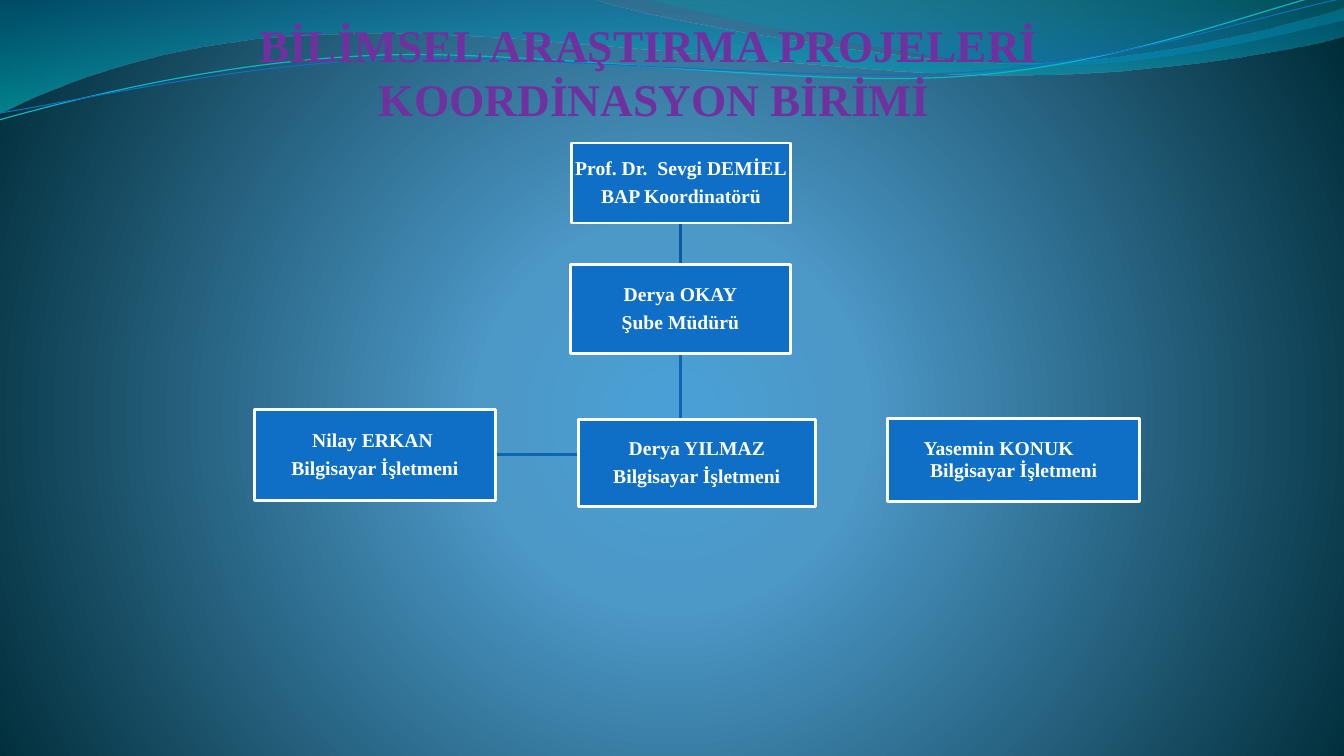
"""Build the organisation chart slide of the research projects unit."""
from pptx import Presentation
from pptx.dml.color import RGBColor
from pptx.enum.shapes import MSO_SHAPE
from pptx.enum.text import MSO_ANCHOR, PP_ALIGN
from pptx.oxml import parse_xml
from pptx.oxml.ns import nsdecls, qn
from pptx.util import Pt

RECTANGLE = MSO_SHAPE.RECTANGLE
MIDDLE, TOP = MSO_ANCHOR.MIDDLE, MSO_ANCHOR.TOP
CENTER = PP_ALIGN.CENTER

FONT = "Times New Roman"
COLORS = {
    "box": "0F6FC6", "white": "FFFFFF", "title": "7030A0",
    "upper link": "0C599F", "lower link": "0E65B4",
    "teal line": "0AB8BF", "blue line": "0F6FC6",
    "centre": "4AA0D6", "middle": "4C98C7", "edge": "002C38",
    "deep blue": "0074A1", "turquoise": "00C6CF",
    "sea green": "00A1A9", "sky": "008BBF",
}
TITLE = ["BİLİMSEL ARAŞTIRMA PROJELERİ", " KOORDİNASYON BİRİMİ"]
STAFF = [
    ((408.2, 102.2, 156.6, 57.2), ["Prof. Dr.  Sevgi DEMİEL", "BAP Koordinatörü"]),
    ((407.5, 188.9, 157, 63.4), ["Derya OKAY", "Şube Müdürü"]),
    ((181.6, 292.5, 172.6, 64.8), ["Nilay ERKAN ", "Bilgisayar İşletmeni"]),
    ((413.3, 299.5, 169, 62.6), ["Derya YILMAZ", "Bilgisayar İşletmeni"]),
    ((634.1, 298.8, 180, 59.6), ["Yasemin KONUK Bilgisayar İşletmeni"]),
]
INSET = 0.7
HANGING = 21.4

BACKGROUND = [(0, "centre", 100), (25, "middle", 100), (100, "edge", 100)]
CIRCLE = '<a:path path="circle"><a:fillToRect l="10000" t="110000" r="10000" b="100000"/></a:path>'
DOWNWARD = '<a:lin ang="5400000" scaled="1"/>'
WAVES = [
    ([(0, "deep blue", 45), (100, "turquoise", 55)], (0, 0), [
        [(422.6, -0.7)],
        [(456.5, 12.2), (637.2, 45.4), (727.9, 45.4)],
        [(819.4, 45.4), (920.2, 18.7), (959.8, 6.5)],
        [(961.2, 25.9)],
        [(943.9, 31.7), (835.2, 54.7), (715.7, 54)],
        [(596.9, 54), (366.5, 20.2), (247, 24.5)],
        [(123.8, 25.9), (43.9, 59.8), (-0.7, 81.4)],
        [(0, 0)]]),
    ([(0, "sea green", 30), (80, "sky", 45)], (460.1, -0.7), [
        [(488.9, 7.9), (654.5, 44.6), (738, 46.8)],
        [(821.5, 49.7), (923, 23), (959.8, 15.1)],
        [(959.8, 0)],
        [(460.1, -0.7)]]),
]
WAVE_LINES = [
    ("teal line", 0.85, (-0.7, 85.7), [
        [(46.1, 72.7), (151.9, 44.6), (265.7, 39.6)],
        [(379.4, 34.6), (568.8, 62.6), (684, 54.7)],
        [(799.2, 47.5), (901.4, 5.8), (958.3, -7.2)]]),
    ("blue line", 0.75, (0, 80.6), [
        [(45.4, 74.2), (157, 47.5), (272.2, 42.5)],
        [(386.6, 38.2), (573.1, 59), (687.6, 51.8)],
        [(802.8, 44.6), (903.6, 10.1), (960.5, -1.4)]]),
]
LINKS = [
    ("lower link", 2, (486, 252.7), [[(486, 324.7)], [(354.2, 324.7)]]),
    ("upper link", 2, (486, 159.1), [[(486, 169.9)], [(486, 169.9)], [(486, 188.6)]]),
]
LEAST_WIDTH = 7.2


def color(name):
    return RGBColor.from_string(COLORS[name])


def gradient(stops, direction):
    marks = "".join(
        f'<a:gs pos="{position * 1000}"><a:srgbClr val="{COLORS[name]}">'
        f'<a:alpha val="{opacity * 1000}"/></a:srgbClr></a:gs>'
        for position, name, opacity in stops)
    return parse_xml(f'<a:gradFill {nsdecls("a")} rotWithShape="1">'
                     f'<a:gsLst>{marks}</a:gsLst>{direction}</a:gradFill>')


def add_outline(slide, start, segments, closed):
    ends = [start] + [segment[-1] for segment in segments]
    left, right = min(x for x, y in ends), max(x for x, y in ends)
    top, bottom = min(y for x, y in ends), max(y for x, y in ends)
    if left == right:
        left, right = left - LEAST_WIDTH / 2, right + LEAST_WIDTH / 2
    builder = slide.shapes.build_freeform(Pt(left), Pt(top))
    builder.add_line_segments([(Pt(right), Pt(bottom))], close=False)
    shape = builder.convert_to_shape()
    shape.shadow.inherit = False
    shape.fill.background()

    def step(tag, points):
        marks = "".join(f'<a:pt x="{Pt(x - left)}" y="{Pt(y - top)}"/>' for x, y in points)
        return f"<a:{tag}>{marks}</a:{tag}>"

    steps = step("moveTo", [start]) + "".join(
        step("lnTo" if len(segment) == 1 else "cubicBezTo", segment) for segment in segments)
    ending = "<a:close/>" if closed else ""
    outline = parse_xml(f'<a:pathLst {nsdecls("a")}><a:path w="{shape.width}" h="{shape.height}">'
                        f'{steps}{ending}</a:path></a:pathLst>')
    geometry = shape.element.spPr.find(qn("a:custGeom"))
    geometry.replace(geometry.find(qn("a:pathLst")), outline)
    return shape


def style_line(line, name, width):
    line.color.rgb = color(name)
    line.width = Pt(width)


def add_wave(slide, stops, start, segments):
    shape = add_outline(slide, start, segments, True)
    shape.line.fill.background()
    properties = shape.element.spPr
    properties.replace(properties.find(qn("a:noFill")), gradient(stops, DOWNWARD))


def add_text(paragraph, text, size, name):
    run = paragraph.add_run()
    run.text = text
    run.font.name = FONT
    run.font.size = Pt(size)
    run.font.bold = True
    run.font.color.rgb = color(name)


def prepare_frame(shape, inset, anchor):
    frame = shape.text_frame
    frame.word_wrap = True
    frame.vertical_anchor = anchor
    frame.margin_left = frame.margin_right = Pt(inset)
    frame.margin_top = frame.margin_bottom = Pt(inset)
    return frame


def add_title(slide):
    title = slide.shapes.add_textbox(Pt(55.4), Pt(12.7), Pt(815.8), Pt(77.2))
    paragraph = prepare_frame(title, 0, TOP).paragraphs[0]
    paragraph.alignment = CENTER
    paragraph.line_spacing = Pt(38.6)
    add_text(paragraph, TITLE[0], 32.4, "title")
    paragraph.add_line_break()
    add_text(paragraph, TITLE[1], 32.4, "title")


def add_staff_box(slide, place, lines):
    shape = slide.shapes.add_shape(RECTANGLE, *map(Pt, place))
    shape.shadow.inherit = False
    shape.fill.solid()
    shape.fill.fore_color.rgb = color("box")
    style_line(shape.line, "white", 2)
    frame = prepare_frame(shape, INSET, MIDDLE)
    for index, text in enumerate(lines):
        paragraph = frame.add_paragraph() if index else frame.paragraphs[0]
        paragraph.alignment = CENTER
        paragraph.line_spacing = 0.9
        paragraph.space_after = Pt(4.9)
        add_text(paragraph, text, 14, "white")
    if len(lines) == 1:
        frame.margin_right = Pt(INSET + HANGING)
        properties = frame.paragraphs[0]._p.get_or_add_pPr()
        properties.set("marL", str(Pt(HANGING)))
        properties.set("indent", str(-Pt(HANGING)))


def main():
    presentation = Presentation()
    presentation.slide_width, presentation.slide_height = Pt(960), Pt(540)
    slide = presentation.slides.add_slide(presentation.slide_layouts[6])
    slide.background.fill.solid()
    backdrop = slide.element.find(".//" + qn("p:bgPr"))
    backdrop.replace(backdrop.find(qn("a:solidFill")), gradient(BACKGROUND, CIRCLE))

    for wave in WAVES:
        add_wave(slide, *wave)
    for name, width, start, segments in WAVE_LINES + LINKS:
        style_line(add_outline(slide, start, segments, False).line, name, width)
    add_title(slide)
    for place, lines in STAFF:
        add_staff_box(slide, place, lines)
    presentation.save("out.pptx")


if __name__ == "__main__":
    main()
